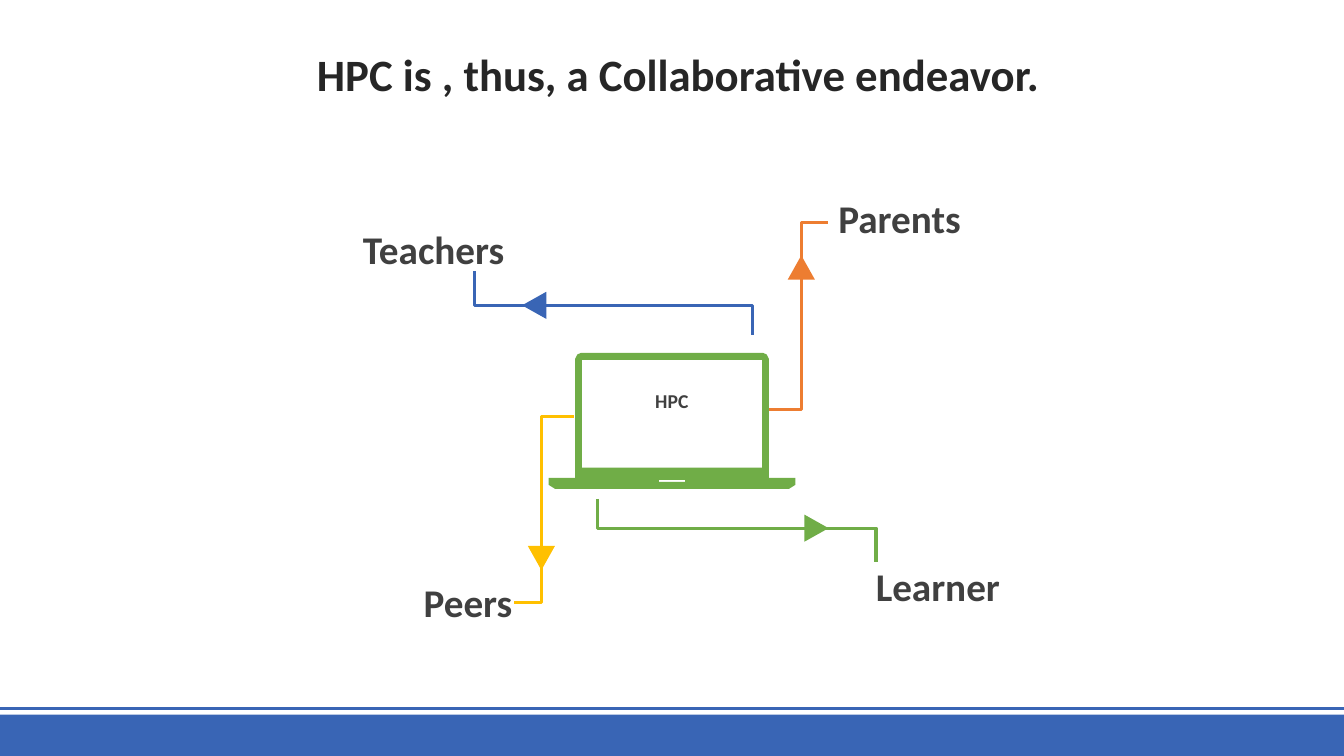
"""Builds the slide on the collaborative endeavor around the HPC laptop."""
from dataclasses import dataclass

from lxml.etree import SubElement
from pptx import Presentation
from pptx.dml.color import RGBColor
from pptx.enum.shapes import MSO_CONNECTOR, MSO_SHAPE
from pptx.enum.text import MSO_ANCHOR, MSO_AUTO_SIZE, PP_ALIGN
from pptx.oxml.ns import qn
from pptx.util import Pt


@dataclass(frozen=True)
class Theme:
    font: str = "Calibri"
    title_color: str = "262626"
    label_color: str = "404040"
    blue: str = "3965B5"
    green: str = "70AD47"
    orange: str = "ED7D31"
    yellow: str = "FFC000"
    title_size: int = 32
    label_size: int = 28
    screen_size: int = 14
    trace_width: float = 2.25
    footer_width: float = 2


THEME = Theme()
WIDTH, HEIGHT = 960, 540
TITLE = " HPC is , thus, a Collaborative endeavor."
TITLE_FRAME = (25.2, 26.6, 911.5, 56.9)
FOOTER_LINE_TOP, FOOTER_TOP = 506.2, 510.5

LABEL_SIZE = (252, 41)
LABELS = [
    ("Parents", 591.8, 135.4, PP_ALIGN.LEFT),
    ("Learner", 618.5, 398.2, PP_ALIGN.LEFT),
    ("Peers", 121, 409.7, PP_ALIGN.RIGHT),
    ("Teachers", 115.2, 157.7, PP_ALIGN.RIGHT),
]
SCREEN_LABEL = ("HPC", (428.4, 274.3, 103, 24.5))

UPRIGHT = [(23, 0), (0, -133.2), (19.4, 0)]
FLAT = [(0, 20.9), (198.7, 0), (0, 24.5)]
TRACES = [
    (THEME.orange, (549.4, 292.3), UPRIGHT, 1, 32, 0),
    (THEME.yellow, (409.7, 297.4), UPRIGHT, -1, 32, 180),
    (THEME.green, (427, 356.4), FLAT, 1, 42.5, 90),
    (THEME.blue, (537.8, 239), FLAT, -1, 42.5, 270),
]
ARROW_WIDTH, ARROW_HEIGHT = 19.4, 17.3

LAPTOP_MIDDLE = 480
LAPTOP_HALF_OUTLINE = [
    (64.9, 252), (67.6, 253.2), (69.2, 256.3), (69.2, 341.3),
    (88.2, 341.3), (88.2, 346.3), (83.5, 349.2),
]
LAPTOP_HOLES = [(64.4, 257, 334.1), (9.4, 342.7, 344.2)]


def color(value):
    return RGBColor.from_string(value)


def add_text(box, text, size, shade, align):
    frame = box.text_frame
    frame.word_wrap = True
    para = frame.paragraphs[0]
    para.alignment = align
    span = para.add_run()
    span.text = text
    span.font.name = THEME.font
    span.font.size = Pt(size)
    span.font.bold = True
    span.font.color.rgb = color(shade)
    return para


def add_label(page, text, frame, size, align):
    box = page.shapes.add_textbox(*map(Pt, frame))
    add_text(box, text, size, THEME.label_color, align)
    box.text_frame.auto_size = MSO_AUTO_SIZE.SHAPE_TO_FIT_TEXT


def paint(shape, fill):
    shape.shadow.inherit = False
    shape.fill.solid()
    shape.fill.fore_color.rgb = color(fill)
    shape.line.fill.background()


def add_title(page):
    title = page.shapes.title
    title.left, title.top, title.width, title.height = map(Pt, TITLE_FRAME)
    title.text_frame.vertical_anchor = MSO_ANCHOR.MIDDLE
    title.text_frame.auto_size = MSO_AUTO_SIZE.NONE
    para = add_text(title, TITLE, THEME.title_size, THEME.title_color, PP_ALIGN.CENTER)
    para.line_spacing = 0.9
    para.space_before = Pt(10)


def add_footer(page):
    rule = page.shapes.add_connector(
        MSO_CONNECTOR.STRAIGHT, 0, Pt(FOOTER_LINE_TOP), Pt(WIDTH), Pt(FOOTER_LINE_TOP))
    rule.line.color.rgb = color(THEME.blue)
    rule.line.width = Pt(THEME.footer_width)
    SubElement(rule.element.spPr, qn("a:effectLst"))
    band = page.shapes.add_shape(
        MSO_SHAPE.RECTANGLE, 0, Pt(FOOTER_TOP), Pt(WIDTH), Pt(HEIGHT - FOOTER_TOP))
    paint(band, THEME.blue)


def add_trace(page, shade, start, steps, sign, setback, rotation):
    points = [start]
    for across, down in steps:
        x, y = points[-1]
        points.append((x + sign * across, y + sign * down))
    builder = page.shapes.build_freeform(*map(Pt, start))
    builder.add_line_segments([(Pt(x), Pt(y)) for x, y in points[1:]], close=False)
    trace = builder.convert_to_shape()
    trace.shadow.inherit = False
    trace.fill.background()
    trace.line.color.rgb = color(shade)
    trace.line.width = Pt(THEME.trace_width)

    (from_x, from_y), (bend_x, bend_y) = points[1:3]
    share = setback / (abs(bend_x - from_x) + abs(bend_y - from_y))
    center_x = bend_x + (from_x - bend_x) * share
    center_y = bend_y + (from_y - bend_y) * share
    arrow = page.shapes.add_shape(
        MSO_SHAPE.ISOSCELES_TRIANGLE, Pt(center_x - ARROW_WIDTH / 2),
        Pt(center_y - ARROW_HEIGHT / 2), Pt(ARROW_WIDTH), Pt(ARROW_HEIGHT))
    arrow.rotation = rotation
    paint(arrow, shade)


def add_laptop(page):
    right = [(LAPTOP_MIDDLE + x, y) for x, y in LAPTOP_HALF_OUTLINE]
    left = [(LAPTOP_MIDDLE - x, y) for x, y in reversed(LAPTOP_HALF_OUTLINE)]
    contours = [right + left]
    for half, top, bottom in LAPTOP_HOLES:
        west, east = LAPTOP_MIDDLE - half, LAPTOP_MIDDLE + half
        contours.append([(west, top), (west, bottom), (east, bottom), (east, top)])
    builder = page.shapes.build_freeform(*map(Pt, contours[0][0]))
    for index, contour in enumerate(contours):
        if index:
            builder.move_to(*map(Pt, contour[0]))
        builder.add_line_segments([(Pt(x), Pt(y)) for x, y in contour[1:]])
    paint(builder.convert_to_shape(), THEME.green)


def main():
    deck = Presentation()
    deck.slide_width, deck.slide_height = Pt(WIDTH), Pt(HEIGHT)
    page = deck.slides.add_slide(deck.slide_layouts.get_by_name("Title Only"))
    add_footer(page)
    add_title(page)
    for trace in TRACES:
        add_trace(page, *trace)
    add_laptop(page)
    add_label(page, *SCREEN_LABEL, THEME.screen_size, PP_ALIGN.CENTER)
    for text, left, top, align in LABELS:
        add_label(page, text, (left, top, *LABEL_SIZE), THEME.label_size, align)
    deck.save("out.pptx")


if __name__ == "__main__":
    main()
